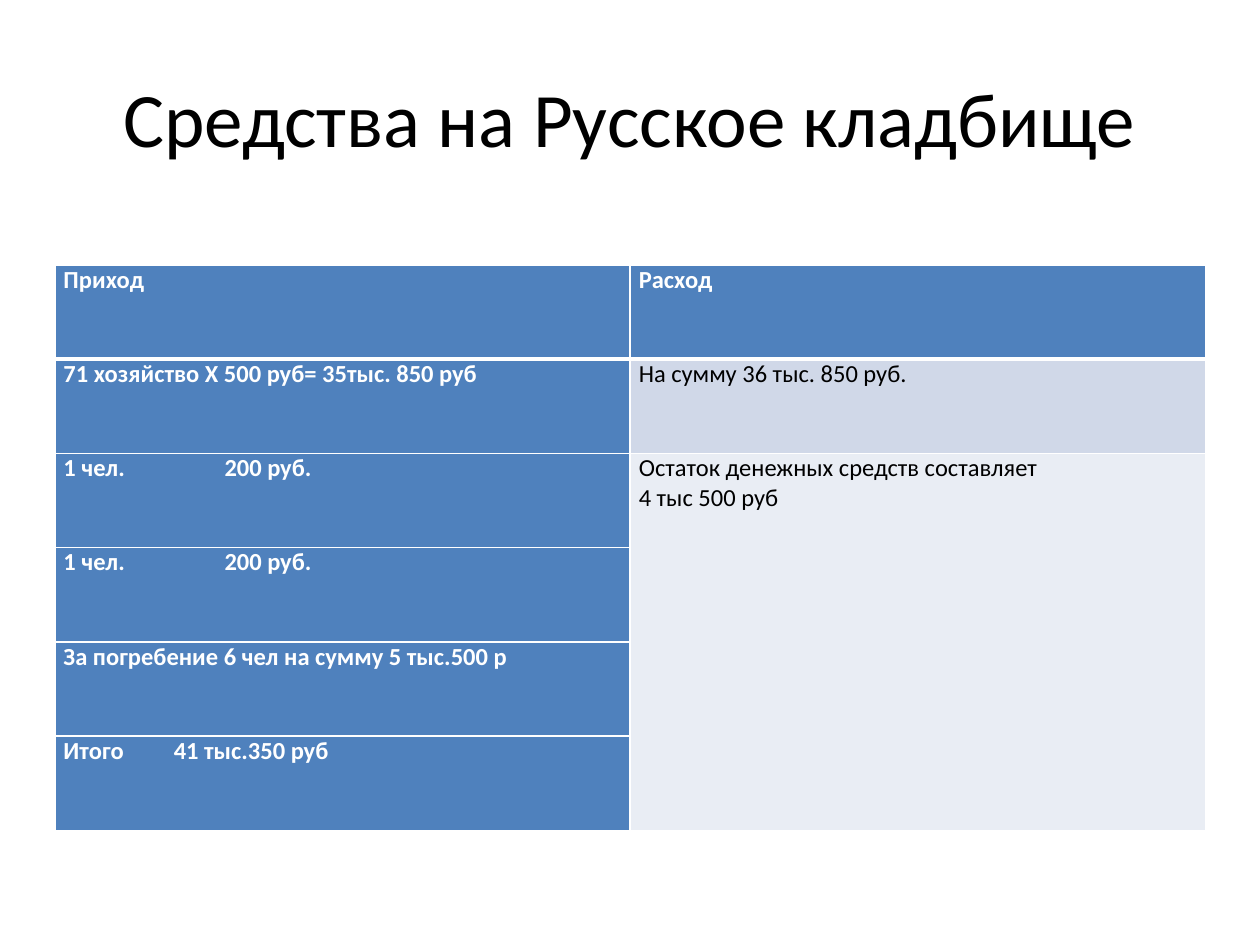
from dataclasses import dataclass

from lxml.etree import SubElement
from pptx import Presentation
from pptx.dml.color import RGBColor as Color
from pptx.enum.text import MSO_ANCHOR as Anchor, PP_ALIGN as Align
from pptx.oxml.ns import qn
from pptx.util import Pt


@dataclass(frozen=True)
class Theme:
    font: str = "Calibri"
    title_size: float = 44
    table_size: float = 14
    text: str = "000000"
    white: str = "FFFFFF"
    accent: str = "4F81BD"
    band_dark: str = "D0D8E8"
    band_light: str = "E9EDF4"


class SlideBuilder:
    def __init__(self, slide, theme):
        self.slide = slide
        self.theme = theme

    def style(self, paragraph, size, color, bold=False):
        font = paragraph.font
        font.name, font.size, font.bold = self.theme.font, Pt(size), bold
        font.color.rgb = Color.from_string(color)

    def title(self, text, left, top, width, height):
        shape = self.slide.shapes.add_textbox(Pt(left), Pt(top), Pt(width), Pt(height))
        frame = shape.text_frame
        frame.word_wrap = True
        frame.vertical_anchor = Anchor.MIDDLE
        paragraph = frame.paragraphs[0]
        paragraph.text = text
        paragraph.alignment = Align.CENTER
        self.style(paragraph, self.theme.title_size, self.theme.text)

    def borders(self, cell, **widths):
        properties = cell._tc.get_or_add_tcPr()
        for side in "LRTB":
            line = SubElement(properties, qn(f"a:ln{side}"), w=str(Pt(widths.get(side, 1))))
            fill = SubElement(line, qn("a:solidFill"))
            SubElement(fill, qn("a:srgbClr"), val=self.theme.white)

    def tab_stop(self, paragraph, position):
        tabs = SubElement(paragraph._p.get_or_add_pPr(), qn("a:tabLst"))
        SubElement(tabs, qn("a:tab"), pos=str(Pt(position)), algn="l")

    def cell(self, cell, text, fill, color, bold, tab):
        cell.margin_left = cell.margin_right = Pt(5)
        cell.margin_top = cell.margin_bottom = 0
        cell.fill.solid()
        cell.fill.fore_color.rgb = Color.from_string(fill)
        cell.text = text
        for paragraph in cell.text_frame.paragraphs:
            if tab:
                self.tab_stop(paragraph, tab)
            self.style(paragraph, self.theme.table_size, color, bold)

    def table(self, rows, tabs, left, top, width, row_height):
        theme = self.theme
        frame = self.slide.shapes.add_table(
            len(rows), 2, Pt(left), Pt(top), Pt(width), Pt(row_height * len(rows)))
        table = frame.table
        table.first_col = True
        for r, row in enumerate(rows):
            for c, text in enumerate(row):
                cell = table.cell(r, c)
                # A thick line divides the header from the body
                self.borders(cell, B=3 if r == 0 else 1, T=3 if r == 1 else 1)
                heading = r == 0 or c == 0
                band = theme.band_dark if r == 1 else theme.band_light
                self.cell(cell, text, theme.accent if heading else band,
                          theme.white if heading else theme.text, heading,
                          tabs.get(r) if c == 0 else None)
        return table


def main():
    presentation = Presentation()
    presentation.slide_width, presentation.slide_height = Pt(720), Pt(540)
    slide = presentation.slides.add_slide(presentation.slide_layouts[6])
    builder = SlideBuilder(slide, Theme())

    # Title
    builder.title("Средства на Русское кладбище", 36, 21.6, 648, 90)

    # Income and expenses
    rows = [
        ("Приход", "Расход"),
        ("71 хозяйство Х 500 руб= 35тыс. 850 руб", "На сумму 36 тыс. 850 руб."),
        ("1 чел.\t200 руб.", "Остаток денежных средств составляет\n4 тыс 500 руб"),
        ("1 чел.\t200 руб.", ""),
        ("За погребение 6 чел на сумму 5 тыс.500 р", ""),
        ("Итого\t41 тыс.350 руб", ""),
    ]
    amount_tabs = {2: 92, 3: 92, 5: 63}
    table = builder.table(rows, amount_tabs, 31.3, 151.3, 657.5, 53.86)

    # The balance fills the rest of the expense column
    table.cell(2, 1).merge(table.cell(5, 1))

    presentation.save("out.pptx")


if __name__ == "__main__":
    main()
